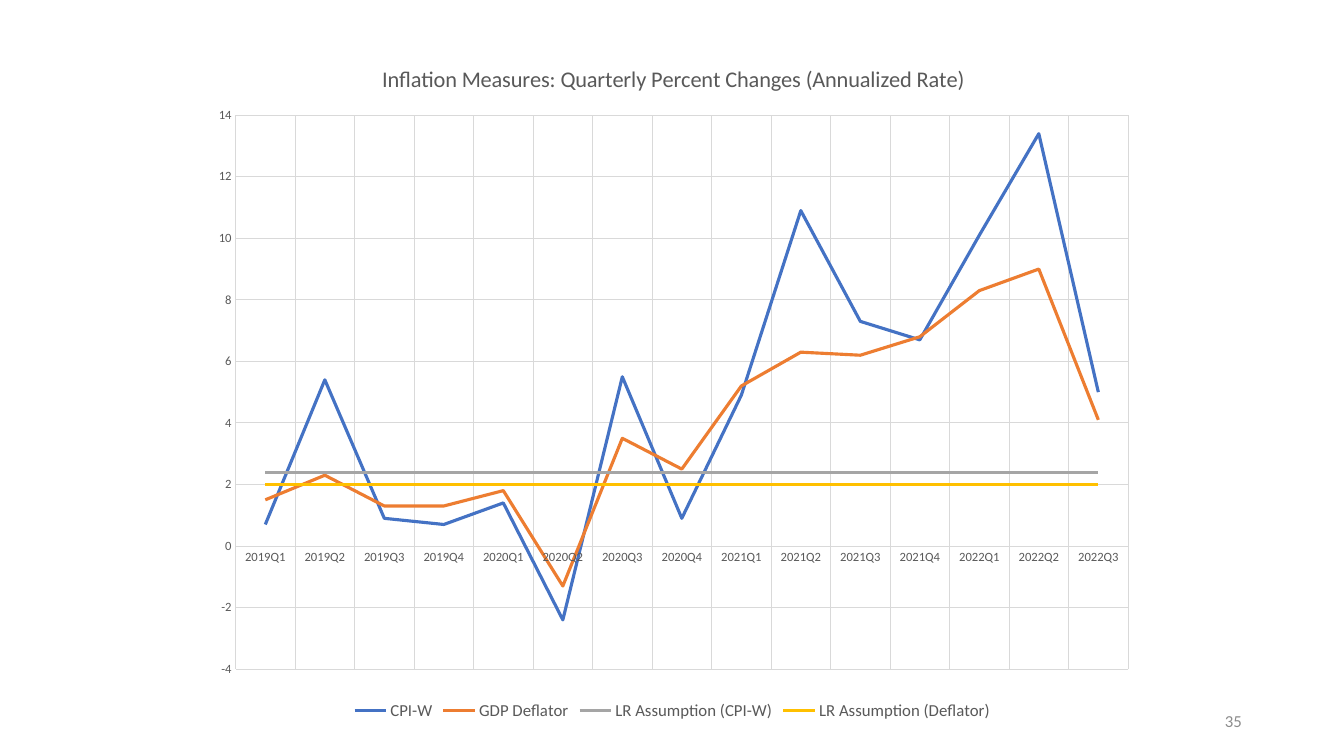
from dataclasses import dataclass

from lxml import etree
from pptx import Presentation
from pptx import util as u
from pptx.chart import data as cd
from pptx.dml import color
from pptx.enum import chart as ch, text
from pptx.oxml import ns


@dataclass(frozen=True)
class Theme:
    font: str = "Calibri"
    ink: str = "595959"
    muted: str = "8C8C8C"
    grid: str = "D9D9D9"
    title: float = 16
    legend: float = 12
    axis: float = 9
    number: float = 12
    grid_width: float = 0.75
    series_width: float = 2.25
    series: tuple = ("4472C4", "ED7D31", "A5A5A5", "FFC000")


T = Theme()

QUARTERS = [f"{year}Q{q}" for year in range(2019, 2023) for q in range(1, 5)][:15]
MEASURES = {
    "CPI-W": [0.7, 5.4, 0.9, 0.7, 1.4, -2.4, 5.5, 0.9, 4.9, 10.9, 7.3, 6.7, 10.1, 13.4, 5],
    "GDP Deflator": [1.5, 2.3, 1.3, 1.3, 1.8, -1.3, 3.5, 2.5, 5.2, 6.3, 6.2, 6.8, 8.3, 9, 4.1],
    "LR Assumption (CPI-W)": [2.4] * len(QUARTERS),
    "LR Assumption (Deflator)": [2] * len(QUARTERS),
}


def style_font(font, size, rgb):
    font.name, font.size, font.bold = T.font, u.Pt(size), False
    font.color.rgb = color.RGBColor.from_string(rgb)


def style_line(line, width, rgb):
    line.width = u.Pt(width)
    line.color.rgb = color.RGBColor.from_string(rgb)


def set_layout(parent, index, **values):
    """Place a chart part by fractions of the chart area."""
    for old in parent.findall(ns.qn("c:layout")):
        parent.remove(old)
    layout = etree.Element(ns.qn("c:layout"))
    manual = etree.SubElement(layout, ns.qn("c:manualLayout"))
    for tag, value in values.items():
        etree.SubElement(manual, ns.qn(f"c:{tag}")).set("val", str(value))
    parent.insert(index, layout)


def style_axis(axis):
    axis.major_tick_mark = axis.minor_tick_mark = ch.XL_TICK_MARK.NONE
    axis.has_major_gridlines = True
    style_line(axis.major_gridlines.format.line, T.grid_width, T.grid)
    style_font(axis.tick_labels.font, T.axis, T.ink)


def add_inflation_chart(s, left, top, width, height):
    data = cd.CategoryChartData(number_format="General")
    data.categories = QUARTERS
    for name, values in MEASURES.items():
        data.add_series(name, values)
    chart = s.shapes.add_chart(ch.XL_CHART_TYPE.LINE, left, top, width, height, data).chart
    style_font(chart.font, T.axis, T.ink)

    # Title
    chart.has_title = True
    p = chart.chart_title.text_frame.paragraphs[0]
    r = p.add_run()
    r.text = "Inflation Measures: Quarterly Percent Changes (Annualized Rate)"
    style_font(p.font, T.title, T.ink)
    style_font(r.font, T.title, T.ink)
    title = chart.chart_title._element
    set_layout(title, 1, xMode="edge", yMode="edge", x=0.19, y=0.04)

    # Axes and plot area
    style_axis(chart.category_axis)
    style_line(chart.category_axis.format.line, T.grid_width, T.grid)
    style_axis(chart.value_axis)
    chart.value_axis.format.line.fill.background()
    chart.value_axis.minimum_scale, chart.value_axis.maximum_scale = -4, 14
    chart.value_axis.major_unit = 2
    plot_area = chart.plots[0]._element.getparent()
    set_layout(plot_area, 0, layoutTarget="inner", xMode="edge", yMode="edge",
               x=0.04, y=0.12, w=0.94, h=0.8)

    # Series
    chart.plots[0].vary_by_categories = False
    for series, rgb in zip(chart.plots[0].series, T.series):
        series.smooth = False
        series.marker.style = ch.XL_MARKER_STYLE.NONE
        style_line(series.format.line, T.series_width, rgb)

    # Legend
    chart.has_legend = True
    chart.legend.position = ch.XL_LEGEND_POSITION.BOTTOM
    chart.legend.include_in_layout = False
    style_font(chart.legend.font, T.legend, T.ink)


def add_slide_number(s, left, top, width, height, number):
    tf = s.shapes.add_textbox(left, top, width, height).text_frame
    tf.word_wrap = True
    tf.vertical_anchor = text.MSO_ANCHOR.MIDDLE
    p = tf.paragraphs[0]
    p.alignment = text.PP_ALIGN.RIGHT
    r = p.add_run()
    r.text = str(number)
    style_font(r.font, T.number, T.muted)


def main():
    prs = Presentation()
    prs.slide_width, prs.slide_height = u.Cm(33.87), u.Cm(19.05)
    s = prs.slides.add_slide(prs.slide_layouts[6])
    add_slide_number(s, u.Cm(23.93), u.Cm(17.65), u.Cm(7.62), u.Cm(1.02), 35)
    add_inflation_chart(s, u.Cm(4.98), u.Cm(0.81), u.Cm(23.93), u.Cm(17.45))
    prs.save("out.pptx")


if __name__ == "__main__":
    main()
